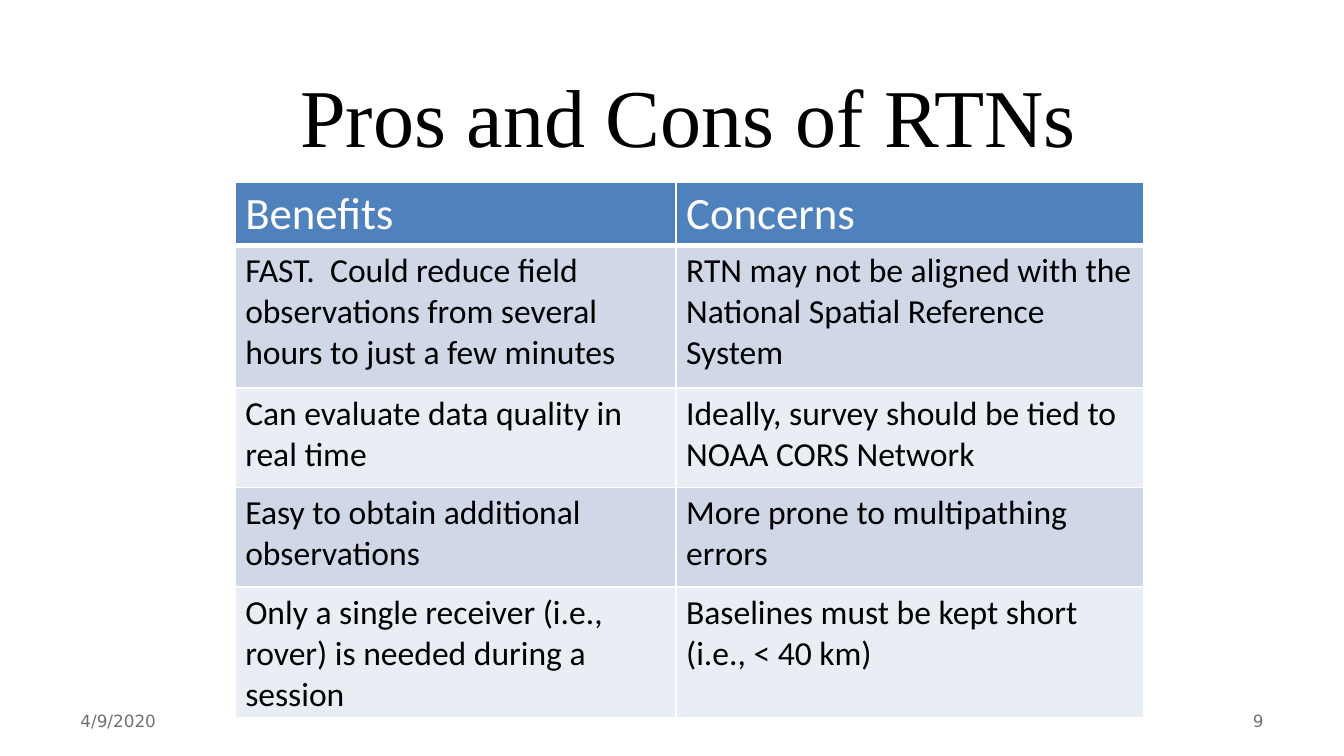
from lxml import etree
from pptx import Presentation
from pptx.dml.color import RGBColor
from pptx.enum import text
from pptx.oxml import ns
from pptx.util import Pt

BLACK = RGBColor(0x00, 0x00, 0x00)
WHITE = RGBColor(0xFF, 0xFF, 0xFF)
GRAY = RGBColor(0x71, 0x71, 0x71)
HEADER = RGBColor(0x4F, 0x81, 0xBD)
BANDS = (RGBColor(0xE9, 0xED, 0xF4), RGBColor(0xD0, 0xD8, 0xE8))

ROWS = [
    ("Benefits", "Concerns"),
    ("FAST.  Could reduce field observations from several hours to just a few minutes",
     "RTN may not be aligned with the National Spatial Reference System"),
    ("Can evaluate data quality in real time",
     "Ideally, survey should be tied to NOAA CORS Network"),
    ("Easy to obtain additional observations", "More prone to multipathing errors"),
    ("Only a single receiver (i.e., rover) is needed during a session",
     "Baselines must be kept short (i.e., < 40 km)"),
]


class SlideBuilder:
    """Holds the style and the current slide, and adds each kind of element."""

    title_font, table_font, footer_font = "Times New Roman", "Calibri", "DejaVu Sans"

    def __init__(self, slide):
        self.slide = slide

    def set_text(self, tf, content, font, size, color, align=text.PP_ALIGN.LEFT):
        tf.text = content
        p = tf.paragraphs[0]
        p.alignment = align
        for r in p.runs:
            r.font.name, r.font.size = font, Pt(size)
            r.font.color.rgb = color

    def title(self, content, left, top, width, height):
        s = self.slide.shapes.title
        s.left, s.top, s.width, s.height = Pt(left), Pt(top), Pt(width), Pt(height)
        s.text_frame.vertical_anchor = text.MSO_ANCHOR.MIDDLE
        self.set_text(s.text_frame, content, self.title_font, 44, BLACK, text.PP_ALIGN.CENTER)

    def footer(self, content, left, align):
        s = self.slide.shapes.add_textbox(Pt(left), Pt(375.1), Pt(168), Pt(21.6))
        s.text_frame.word_wrap = True
        s.text_frame.vertical_anchor = text.MSO_ANCHOR.MIDDLE
        self.set_text(s.text_frame, content, self.footer_font, 9, GRAY, align)

    def border(self, cell, side, width):
        tc_pr = cell._tc.get_or_add_tcPr()
        line = etree.SubElement(tc_pr, ns.qn(f"a:ln{side}"), w=str(Pt(width)))
        fill = etree.SubElement(line, ns.qn("a:solidFill"))
        etree.SubElement(fill, ns.qn("a:srgbClr"), val=str(WHITE))

    def cell(self, cell, content, row):
        cell.margin_left = cell.margin_right = Pt(5.4)
        cell.margin_top = cell.margin_bottom = Pt(2.7)
        for side in "LRTB":
            heavy = (row, side) in ((0, "B"), (1, "T"))
            self.border(cell, side, 3 if heavy else 1)
        cell.fill.solid()
        cell.fill.fore_color.rgb = BANDS[row % 2] if row else HEADER
        size, color = (18, BLACK) if row else (24, WHITE)
        self.set_text(cell.text_frame, content, self.table_font, size, color)

    def table(self, rows, left, top, widths, heights):
        table = self.slide.shapes.add_table(
            len(rows), len(widths), Pt(left), Pt(top), Pt(sum(widths)), Pt(sum(heights))).table
        for column, width in zip(table.columns, widths):
            column.width = Pt(width)
        for i, (row, height) in enumerate(zip(rows, heights)):
            table.rows[i].height = Pt(height)
            for j, content in enumerate(row):
                self.cell(table.cell(i, j), content, i)


def main():
    prs = Presentation()
    prs.slide_width, prs.slide_height = Pt(720), Pt(405)
    builder = SlideBuilder(prs.slides.add_slide(prs.slide_layouts[5]))
    builder.footer("4/9/2020", 36, text.PP_ALIGN.LEFT)
    builder.footer("9", 516, text.PP_ALIGN.RIGHT)
    builder.title("Pros and Cons of RTNs", 95.8, 24.5, 545.8, 73.4)
    builder.table(ROWS, 126, 97.4, (236.2, 250.5), (31, 76.3, 53.3, 53.3, 67.7))
    prs.save("out.pptx")


if __name__ == "__main__":
    main()
